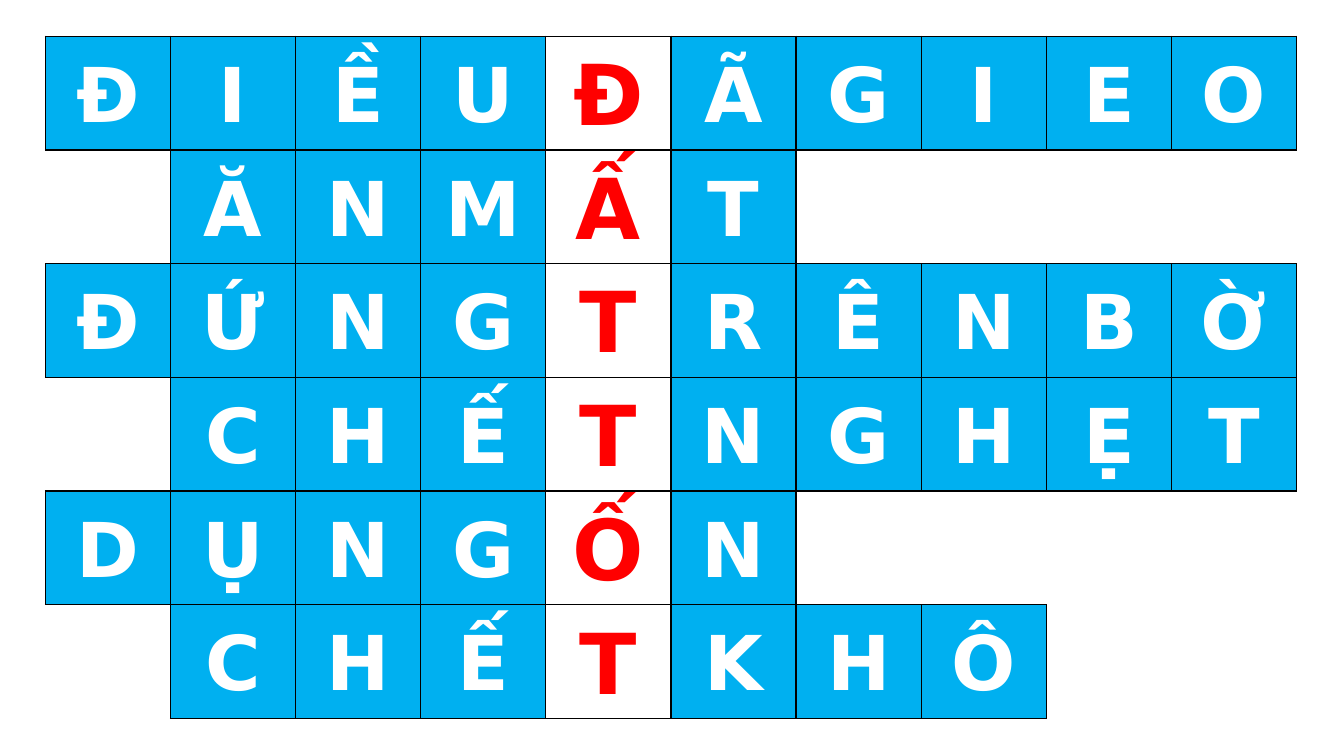
from lxml import etree
from pptx import Presentation, util as u
from pptx.dml.color import RGBColor
from pptx.enum import text
from pptx.oxml import ns

COLORS = {"tile": "00B0F0", "letter": "FFFFFF", "key_tile": "FFFFFF",
          "key_letter": "FF0000", "line": "000000"}

# Each answer starts in a column of the grid; the keyword reads down one column
ANSWERS = [(0, "ĐIỀUĐÃGIEO"), (1, "ĂNMẤT"), (0, "ĐỨNGTRÊNBỜ"),
           (1, "CHẾTNGHẸT"), (0, "DỤNGỐN"), (1, "CHẾTKHÔ")]
# Full answer letters, including the keyword column
ANSWERS[3] = (1, "CHẾTNGHẸT")
KEY_COLUMN, COLUMNS = 4, 10
SIDES = {"lnL": (0, -1), "lnR": (0, 1), "lnT": (-1, 0), "lnB": (1, 0)}


class CrosswordSlide:
    def __init__(self, deck):
        self.width, self.height = deck.slide_width, deck.slide_height
        self.page = deck.slides.add_slide(deck.slide_layouts[6])
        self.font = "DejaVu Sans"

    def color(self, name):
        return RGBColor.from_string(COLORS[name])

    def border(self, cell, side, visible):
        line = etree.Element(ns.qn("a:" + side), w=str(u.Pt(1)))
        if visible:
            fill = etree.SubElement(line, ns.qn("a:solidFill"))
            etree.SubElement(fill, ns.qn("a:srgbClr"), val=COLORS["line"])
        else:
            etree.SubElement(line, ns.qn("a:noFill"))
        return line

    def letter(self, cell, character, is_key):
        prefix = "key_" if is_key else ""
        cell.fill.solid()
        cell.fill.fore_color.rgb = self.color(prefix + "tile")
        cell.text_frame.text = character
        para = cell.text_frame.paragraphs[0]
        para.alignment = text.PP_ALIGN.CENTER
        para.line_spacing = 1.07
        font = para.runs[0].font
        font.name, font.bold = self.font, True
        font.size = u.Pt(60 if is_key else 54)
        font.color.rgb = self.color(prefix + "letter")

    def crossword(self, left, top, width, height, answers):
        letters = {(row, start + offset): character
                   for row, (start, answer) in enumerate(answers)
                   for offset, character in enumerate(answer)}
        table = self.page.shapes.add_table(
            len(answers), COLUMNS, int(left * self.width), int(top * self.height),
            int(width * self.width), int(height * self.height)).table
        table.first_row = table.horz_banding = False

        for row in range(len(answers)):
            for column in range(COLUMNS):
                cell = table.cell(row, column)
                cell.vertical_anchor = text.MSO_ANCHOR.MIDDLE
                cell.margin_left = cell.margin_right = u.Inches(0.07)
                cell.margin_top = cell.margin_bottom = 0
                if (row, column) in letters:
                    self.letter(cell, letters[row, column], column == KEY_COLUMN)
                else:
                    cell.fill.background()
                # An edge shows when a letter stands on either side of it
                properties = cell._tc.get_or_add_tcPr()
                for index, (side, (down, right)) in enumerate(SIDES.items()):
                    visible = ((row, column) in letters
                               or (row + down, column + right) in letters)
                    properties.insert(index, self.border(cell, side, visible))


def main():
    deck = Presentation()
    deck.slide_width, deck.slide_height = u.Inches(13.33), u.Inches(7.5)
    slide = CrosswordSlide(deck)
    slide.crossword(0.45 / 13.33, 0.36 / 7.5, 12.41 / 13.33, 6.77 / 7.5, ANSWERS)
    deck.save("out.pptx")


if __name__ == "__main__":
    main()
